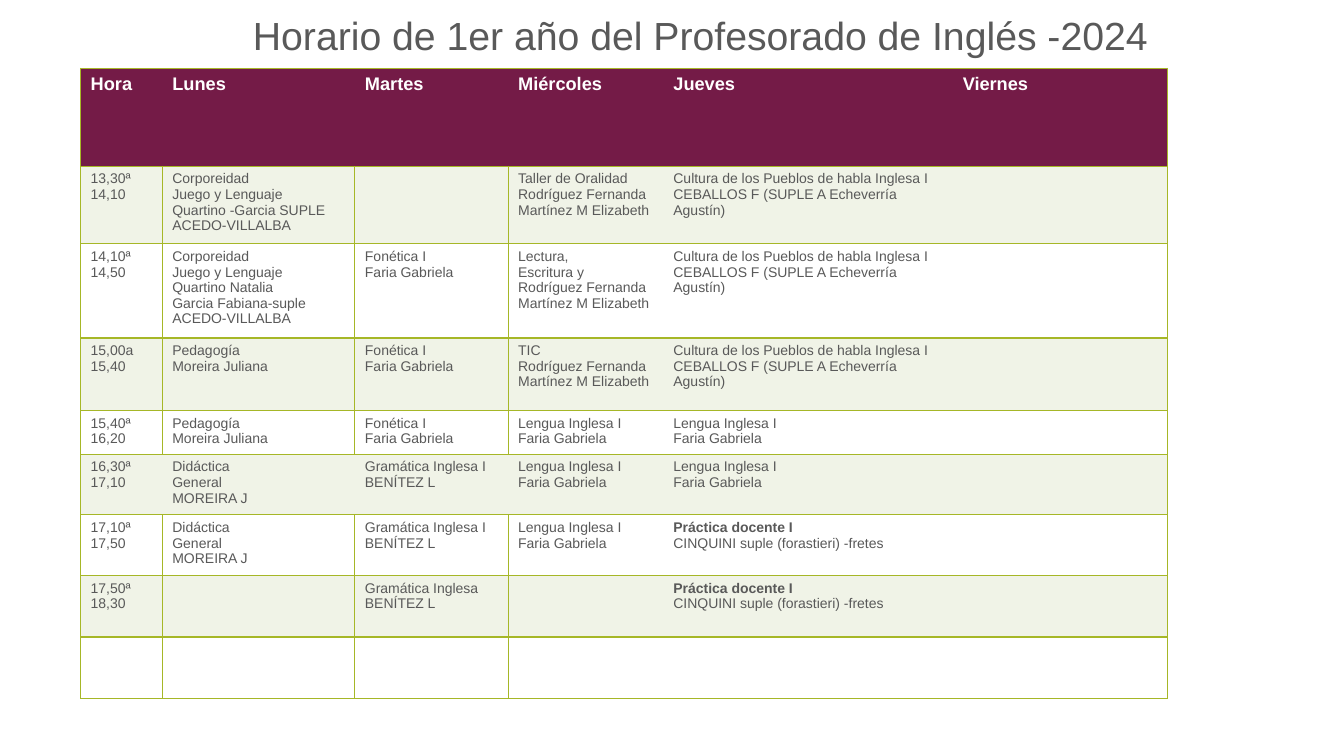
from dataclasses import dataclass

from lxml import etree
from pptx import Presentation
from pptx.dml.color import RGBColor
from pptx.enum import text as t
from pptx.oxml import ns
from pptx.util import Inches, Pt

WINE = RGBColor(0x74, 0x1B, 0x47)
GREEN = RGBColor(0xA6, 0xB7, 0x27)
PALE = RGBColor(0xF0, 0xF3, 0xE7)
WHITE = RGBColor(0xFF, 0xFF, 0xFF)
GREY = RGBColor(0x59, 0x59, 0x59)
FONT = "Arial"


@dataclass(frozen=True)
class Period:
    height: float
    cells: tuple[str, ...]
    ruled: bool = True  # vertical rules between the first columns


# Timetable contents: one line of a cell per paragraph
CULTURE = "Cultura de los Pueblos de habla Inglesa I\nCEBALLOS F (SUPLE A Echeverría Agustín)"
PHONETICS = "Fonética I\nFaria Gabriela"
PEDAGOGY = "Pedagogía\nMoreira Juliana"
LANGUAGE = "Lengua Inglesa I\nFaria Gabriela"
DIDACTICS = "Didáctica\nGeneral\nMOREIRA J"
GRAMMAR = "Gramática Inglesa I\nBENÍTEZ L"
PRACTICE_TITLE = "Práctica docente I"
PRACTICE = PRACTICE_TITLE + "\nCINQUINI suple (forastieri) -fretes"
TEACHERS = "Rodríguez Fernanda\nMartínez M Elizabeth"

COLUMN_WIDTHS = (0.81, 1.91, 1.52, 1.54, 2.87, 2.13)
RULED_COLUMNS = 3
PERIODS = (
    Period(0.97, ("Hora", "Lunes", "Martes", "Miércoles", "Jueves", "Viernes"), ruled=False),
    Period(0.72, ("13,30ª\n14,10",
                  "Corporeidad\nJuego y Lenguaje\nQuartino -Garcia SUPLE ACEDO-VILLALBA",
                  "", "Taller de Oralidad\n" + TEACHERS, CULTURE, "")),
    Period(0.92, ("14,10ª\n14,50",
                  "Corporeidad\nJuego y Lenguaje\nQuartino Natalia\n"
                  "Garcia Fabiana-suple ACEDO-VILLALBA",
                  PHONETICS, "Lectura,\nEscritura y\n" + TEACHERS, CULTURE, "")),
    Period(0.72, ("15,00a\n15,40", PEDAGOGY, PHONETICS, "TIC\n" + TEACHERS, CULTURE, "")),
    Period(0.42, ("15,40ª\n16,20", PEDAGOGY, PHONETICS, LANGUAGE, LANGUAGE, "")),
    Period(0.57, ("16,30ª\n17,10", DIDACTICS, GRAMMAR, LANGUAGE, LANGUAGE, ""), ruled=False),
    Period(0.57, ("17,10ª\n17,50", DIDACTICS, GRAMMAR, LANGUAGE, PRACTICE, "")),
    Period(0.61, ("17,50ª\n18,30", "", "Gramática Inglesa\nBENÍTEZ L", "", PRACTICE, "")),
    Period(0.61, ("",) * len(COLUMN_WIDTHS)),
)


def add_border(cell, side: str, visible: bool) -> None:
    line = etree.SubElement(cell._tc.get_or_add_tcPr(), ns.qn(f"a:ln{side}"), w=str(Pt(1)))
    if visible:
        solid = etree.SubElement(line, ns.qn("a:solidFill"))
        etree.SubElement(solid, ns.qn("a:srgbClr"), val=str(GREEN))
    else:
        etree.SubElement(line, ns.qn("a:noFill"))


def fill_cell(cell, content: str, row: int, column: int, ruled: bool) -> None:
    header = row == 0
    last = len(COLUMN_WIDTHS) - 1
    add_border(cell, "L", column == 0 or (ruled and column <= RULED_COLUMNS))
    add_border(cell, "R", column == last or (ruled and column < RULED_COLUMNS))
    add_border(cell, "T", True)
    add_border(cell, "B", True)
    cell.fill.solid()
    cell.fill.fore_color.rgb = WINE if header else PALE if row % 2 else WHITE
    cell.margin_left = cell.margin_right = Inches(0.1)
    cell.margin_top = cell.margin_bottom = Inches(0.05)
    cell.text = content
    for para in cell.text_frame.paragraphs:
        para.font.name = FONT
        para.font.size = Pt(13 if header else 10)
        para.font.bold = header or para.text == PRACTICE_TITLE
        para.font.color.rgb = WHITE if header else GREY


def add_title(page) -> None:
    box = page.shapes.add_textbox(Inches(2.41), 0, Inches(10.25), Inches(1.07))
    frame = box.text_frame
    frame.word_wrap = True
    frame.vertical_anchor = t.MSO_ANCHOR.TOP
    frame.margin_top = Inches(0.17)
    para = frame.paragraphs[0]
    para.text = "Horario de 1er año del Profesorado de Inglés -2024"
    para.line_spacing = 0.9
    para.font.name = FONT
    para.font.size = Pt(28)
    para.font.color.rgb = GREY


def add_timetable(page) -> None:
    height = sum(period.height for period in PERIODS)
    table = page.shapes.add_table(
        len(PERIODS), len(COLUMN_WIDTHS), Inches(0.8), Inches(0.68),
        Inches(sum(COLUMN_WIDTHS)), Inches(height)).table
    table.first_row = table.horz_banding = False
    for column, width in enumerate(COLUMN_WIDTHS):
        table.columns[column].width = Inches(width)
    for row, period in enumerate(PERIODS):
        table.rows[row].height = Inches(period.height)
        for column, content in enumerate(period.cells):
            fill_cell(table.cell(row, column), content, row, column, period.ruled)


def main() -> None:
    deck = Presentation()
    deck.slide_width, deck.slide_height = Inches(13.33), Inches(7.5)
    page = deck.slides.add_slide(deck.slide_layouts[6])
    add_title(page)
    add_timetable(page)
    deck.save("out.pptx")


if __name__ == "__main__":
    main()
